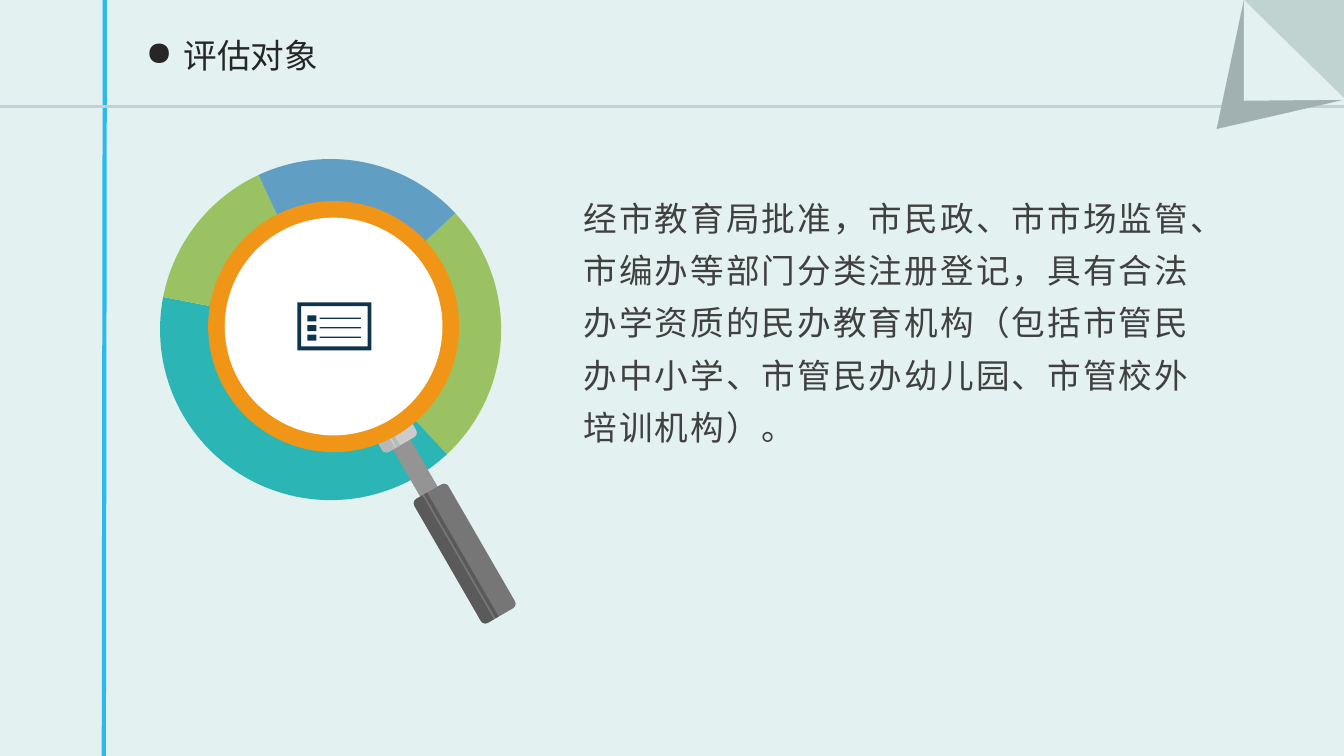
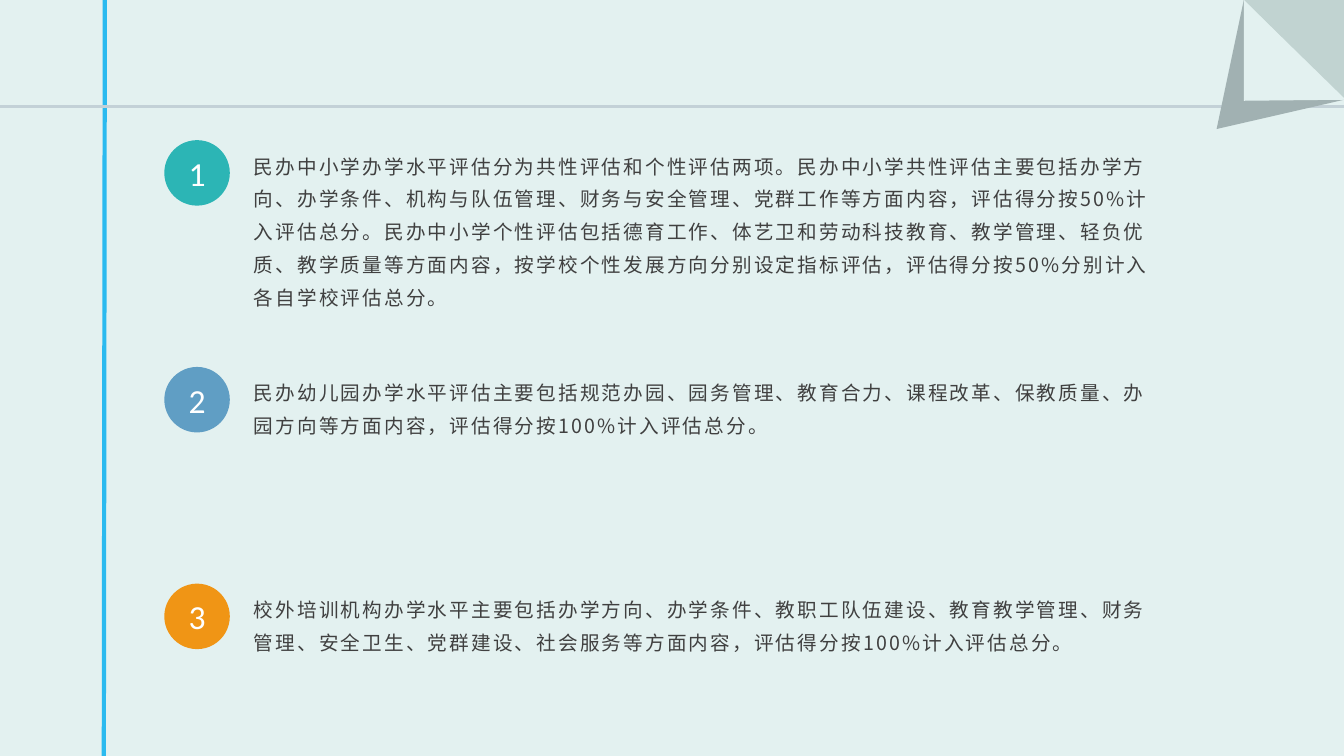
"""Build two slides on how private schools are assessed."""
import math

from lxml import etree
from pptx import Presentation
from pptx import util as u
from pptx.chart.data import CategoryChartData
from pptx.dml.color import RGBColor
from pptx.enum import chart as ch
from pptx.enum import shapes as sh
from pptx.enum import text as tx
from pptx.oxml.ns import qn

WIDE, HIGH = u.Emu(12192000), u.Emu(6858000)
COLS, ROWS = 133.33, 75
CELL = HIGH / ROWS

PALE = RGBColor(0xE3, 0xF1, 0xF0)
SKY = RGBColor(0x2B, 0xBA, 0xEF)
RULE = RGBColor(0xC3, 0xD1, 0xD7)
FOLD = RGBColor(0xC1, 0xD3, 0xD1)
SHADE = RGBColor(0xA1, 0xB1, 0xB2)
INK = RGBColor(0x26, 0x26, 0x26)
BODY = RGBColor(0x40, 0x40, 0x40)
NAVY = RGBColor(0x0E, 0x33, 0x4D)
WHITE = RGBColor(0xFF, 0xFF, 0xFF)
TEAL = RGBColor(0x2C, 0xB5, 0xB5)
BLUE = RGBColor(0x60, 0x9E, 0xC4)
GREEN = RGBColor(0x9B, 0xC2, 0x62)
AMBER = RGBColor(0xF0, 0x95, 0x15)
STEEL = RGBColor(0x94, 0x94, 0x94)
SILVER = RGBColor(0xCC, 0xCC, 0xCC)
ASH = RGBColor(0xB8, 0xB8, 0xB8)
GREY = RGBColor(0x76, 0x76, 0x76)
COAL = RGBColor(0x5A, 0x5A, 0x5A)

HAN, LATIN = "Noto Sans CJK SC", "Calibri"
KIND = sh.MSO_SHAPE
LENS = (33.1, 32.4)
TILT = 30

SCOPE = ("经市教育局批准，市民政、市市场监管、市编办等部门分类注册登记，"
         "具有合法办学资质的民办教育机构（包括市管民办中小学、市管民办幼儿园、"
         "市管校外培训机构）。")
ITEMS = [
    (13.9, TEAL,
     "民办中小学办学水平评估分为共性评估和个性评估两项。民办中小学共性评估主要包括"
     "办学方向、办学条件、机构与队伍管理、财务与安全管理、党群工作等方面内容，"
     "评估得分按50%计入评估总分。民办中小学个性评估包括德育工作、体艺卫和劳动科技教育、"
     "教学管理、轻负优质、教学质量等方面内容，按学校个性发展方向分别设定指标评估，"
     "评估得分按50%分别计入各自学校评估总分。"),
    (36.4, BLUE,
     "民办幼儿园办学水平评估主要包括规范办园、园务管理、教育合力、课程改革、"
     "保教质量、办园方向等方面内容，评估得分按100%计入评估总分。"),
    (57.9, AMBER,
     "校外培训机构办学水平主要包括办学方向、办学条件、教职工队伍建设、教育教学管理、"
     "财务管理、安全卫生、党群建设、社会服务等方面内容，评估得分按100%计入评估总分。"),
]


def grid(*cells):
    """Turn counts of grid cells into lengths."""
    return [u.Emu(round(n * CELL)) for n in cells]


def paint(form, fill):
    """Give a shape a flat fill with no line or shadow."""
    form.fill.solid()
    form.fill.fore_color.rgb = fill
    form.line.fill.background()
    form.shadow.inherit = False
    return form


def block(slide, kind, x, y, w, h, fill):
    """Add a flat preset shape."""
    return paint(slide.shapes.add_shape(kind, *grid(x, y, w, h)), fill)


def disc(slide, mid, size, fill):
    """Add a circle around a centre."""
    x, y = (n - size / 2 for n in mid)
    return block(slide, KIND.OVAL, x, y, size, size, fill)


def facet(slide, dots, fill):
    """Add a closed polygon."""
    dots = [grid(*dot) for dot in dots]
    pen = slide.shapes.build_freeform(*dots[0])
    pen.add_line_segments(dots[1:], close=True)
    paint(pen.convert_to_shape(), fill)


def rule(slide, start, end, tint, size):
    """Add a plain straight line."""
    line = slide.shapes.add_connector(
        sh.MSO_CONNECTOR.STRAIGHT, *grid(*start, *end))
    line.line.color.rgb = tint
    line.line.width = u.Pt(size)
    etree.SubElement(line._element.spPr, qn("a:effectLst"))


def write(form, words, size, tint, face=HAN, lead=None, track=0, mark=None,
          side=None):
    """Put one formatted paragraph in a shape."""
    para = form.text_frame.paragraphs[0]
    if mark:
        props = para._p.get_or_add_pPr()
        dent = grid(3.75)[0]
        props.set("marL", str(dent))
        props.set("indent", str(-dent))
        etree.SubElement(props, qn("a:buChar")).set("char", mark)
    if lead:
        para.line_spacing = lead
    if side is not None:
        para.alignment = side
    run = para.add_run()
    run.text = words
    run.font.size = u.Pt(size)
    run.font.color.rgb = tint
    run.font.name = face
    props = run._r.get_or_add_rPr()
    etree.SubElement(props, qn("a:ea")).set("typeface", face)
    if track:
        props.set("spc", str(round(track * 100)))


def note(slide, x, y, w, h, words, size, tint, **style):
    """Add a wrapping text box."""
    box = slide.shapes.add_textbox(*grid(x, y, w, h))
    box.text_frame.word_wrap = True
    box.text_frame.auto_size = tx.MSO_AUTO_SIZE.SHAPE_TO_FIT_TEXT
    write(box, words, size, tint, **style)


def page(deck):
    """Add a slide with the shared rules and folded corner."""
    slide = deck.slides.add_slide(deck.slide_layouts[6])
    slide.background.fill.solid()
    slide.background.fill.fore_color.rgb = PALE
    rule(slide, (10.4, 0), (10.3, ROWS), SKY, 3)
    rule(slide, (0, 10.6), (COLS, 10.6), RULE, 2.25)
    facet(slide, [(123.4, 0), (COLS, 0), (COLS, 9.7)], FOLD)
    facet(slide, [(123.4, 0), (120.7, 12.8), (COLS, 9.9), (123.4, 9.9)], SHADE)
    facet(slide, [(123.4, 0), (123.4, 10), (COLS, 9.9)], PALE)
    return slide


def ring(slide):
    """Add the doughnut chart behind the lens."""
    data = CategoryChartData()
    data.categories = ["1", "2", "3", "4"]
    data.add_series("Series 1", (25, 40, 15, 20))
    chart = slide.shapes.add_chart(
        ch.XL_CHART_TYPE.DOUGHNUT, *grid(14.5, 13.9, 36.6, 37.6), data).chart
    chart.has_legend = chart.has_title = False
    chart.font.size, chart.font.name = u.Pt(18), LATIN
    plot = chart.plots[0]
    plot.vary_by_categories = False
    for n, tint in enumerate((GREEN, TEAL, GREEN, BLUE)):
        part = plot.series[0].points[n].format
        part.fill.solid()
        part.fill.fore_color.rgb = tint
        part.line.fill.background()
    for tag, val in (("c:firstSliceAng", 47), ("c:holeSize", 90)):
        node = plot._element.find(qn(tag))
        if node is None:
            node = etree.SubElement(plot._element, qn(tag))
        node.set("val", str(val))


def bar(slide, kind, left, right, near, far, fill):
    """Add a bar on the tilted axis that leaves the lens centre."""
    turn = math.radians(TILT)
    side, out = (left + right) / 2, (near + far) / 2
    x = LENS[0] + side * math.cos(turn) + out * math.sin(turn)
    y = LENS[1] - side * math.sin(turn) + out * math.cos(turn)
    w, h, spin = right - left, far - near, -TILT
    if kind == KIND.ROUND_2_SAME_RECTANGLE:
        w, h, spin = h, w, spin - 90
    form = block(slide, kind, x - w / 2, y - h / 2, w, h, fill)
    form.rotation = spin
    if len(form.adjustments):
        form.adjustments[0] = 0.5 / min(w, h)


def glass(slide):
    """Draw the magnifying glass."""
    full, half = KIND.ROUNDED_RECTANGLE, KIND.ROUND_2_SAME_RECTANGLE
    flat = KIND.RECTANGLE
    bar(slide, flat, -1, 1, 12.5, 20.2, STEEL)
    for near, far, base, dark in ((9.8, 13.5, SILVER, ASH),
                                  (18.9, 33.1, GREY, COAL)):
        bar(slide, full, -1.95, 1.95, near, far, base)
        bar(slide, half, -1.95, -0.75, near, far, dark)
        bar(slide, flat, -0.55, -0.2, near, far, dark)
    disc(slide, LENS, 24.9, AMBER)
    disc(slide, LENS, 21.6, WHITE)


def icon(slide):
    """Draw the list icon inside the lens."""
    frame = block(slide, KIND.FRAME, 29.5, 30, 7.35, 4.75, NAVY)
    frame.adjustments[0] = 0.08
    for n in range(3):
        y = 31.3 + n * 0.95
        block(slide, KIND.RECTANGLE, 30.5, y, 0.9, 0.6, NAVY)
        block(slide, KIND.RECTANGLE, 31.7, y + 0.2, 4.1, 0.13, NAVY)


def target(deck):
    """Build the slide on who is assessed."""
    slide = page(deck)
    note(slide, 13.5, 3, 35.7, 5, "评估对象", 24, INK, mark="●")
    ring(slide)
    glass(slide)
    note(slide, 56.9, 17.9, 64.5, 27.2, SCOPE, 24, BODY, lead=1.3, track=1.5)
    icon(slide)


def content(deck):
    """Build the slide on what is assessed."""
    slide = page(deck)
    for n, (y, tint, words) in enumerate(ITEMS, 1):
        badge = block(slide, KIND.OVAL, 16.3, y, 6.5, 6.5, tint)
        badge.text_frame.vertical_anchor = tx.MSO_ANCHOR.MIDDLE
        write(badge, str(n), 24, WHITE, face=LATIN, side=tx.PP_ALIGN.CENTER)
        note(slide, 24.2, y, 92, 7.6, words, 14, BODY, lead=1.4, track=1.5)


def main():
    """Build and save the deck."""
    deck = Presentation()
    deck.slide_width, deck.slide_height = WIDE, HIGH
    target(deck)
    content(deck)
    deck.save("out.pptx")


if __name__ == "__main__":
    main()
